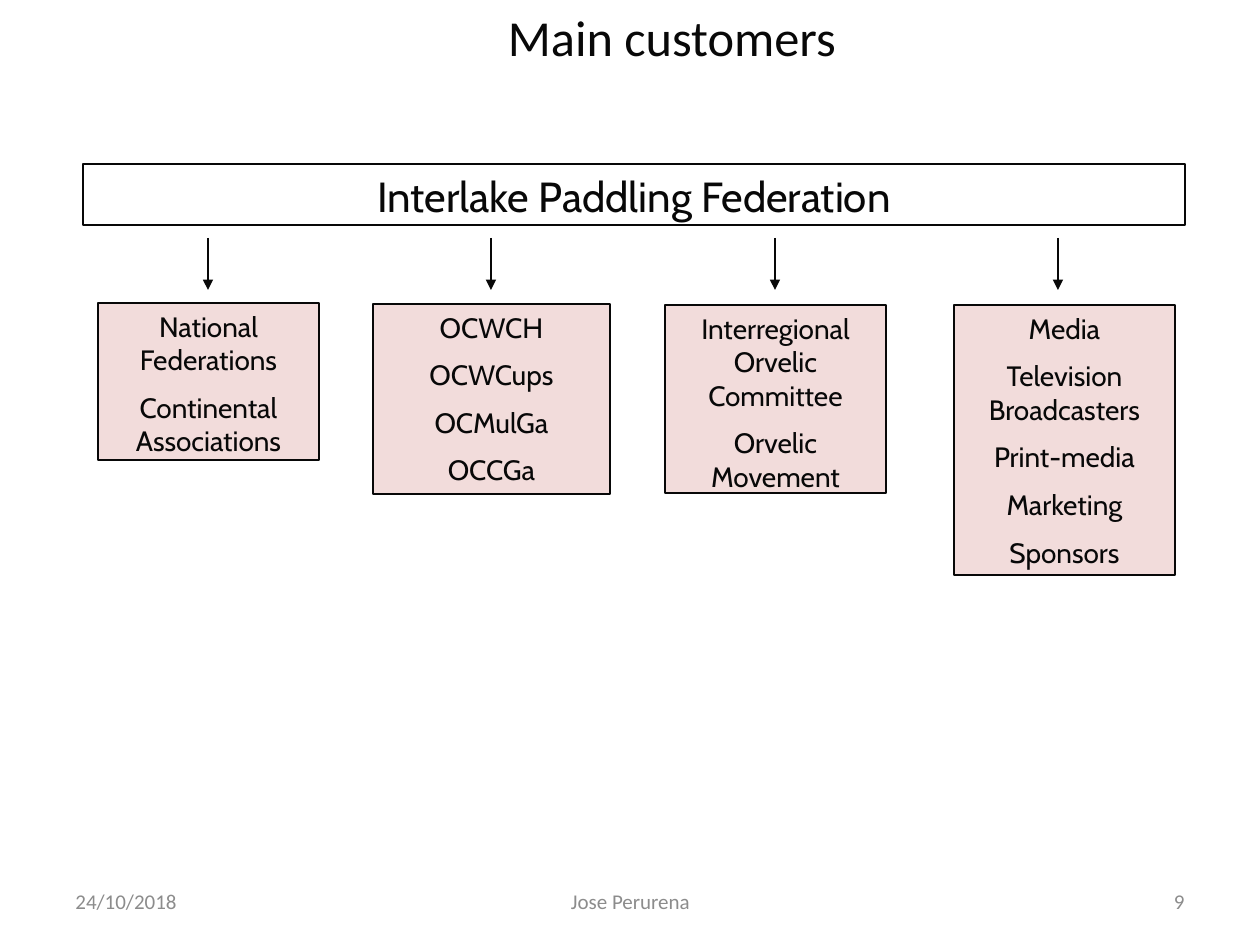
from copy import deepcopy

from pptx import Presentation
from pptx.dml.color import RGBColor
from pptx.enum.shapes import MSO_CONNECTOR as Conn, MSO_SHAPE as Shape
from pptx.enum.text import MSO_ANCHOR as Anchor, PP_ALIGN as Align
from pptx.oxml.ns import qn
from pptx.util import Pt
from lxml import etree

INK = RGBColor(0x08, 0x08, 0x08)
ROSE = RGBColor(0xF2, 0xDC, 0xDB)
GREY = RGBColor(0x8C, 0x8C, 0x8C)
SCALE = 914400 / 126


def px(*nums):
    return [round(n * SCALE) for n in nums]


def write(frame, paras, size=16, font="Cabin", color=INK,
          align=Align.CENTER, anchor=Anchor.TOP, gap=0):
    """Fill a text frame with one paragraph per item, all in one format."""
    frame.word_wrap = True
    frame.vertical_anchor = anchor
    for i, text in enumerate(paras):
        para = frame.add_paragraph() if i else frame.paragraphs[0]
        para.text = text
        para.alignment = align
        para.space_before = Pt(gap)
        for run in para.runs:
            run.font.size = Pt(size)
            run.font.name = font
            run.font.color.rgb = color
        # Line breaks take the format of the text around them
        for brk in para._p.findall(qn("a:br")):
            brk.append(deepcopy(para.runs[0]._r.rPr))


class Chart:
    """Holds the slide and its line style."""

    def __init__(self, slide, color=INK, width=1.5):
        self.shapes = slide.shapes
        self.color = color
        self.width = Pt(width)

    def stroke(self, line):
        line.color.rgb = self.color
        line.width = self.width

    def label(self, area, text, **style):
        box = self.shapes.add_textbox(*px(*area))
        write(box.text_frame, [text], font="Calibri",
              anchor=Anchor.MIDDLE, **style)

    def box(self, area, paras, fill=None, size=16):
        rect = self.shapes.add_shape(Shape.RECTANGLE, *px(*area))
        rect.shadow.inherit = False
        if fill is None:
            rect.fill.background()
        else:
            rect.fill.solid()
            rect.fill.fore_color.rgb = fill
        self.stroke(rect.line)
        write(rect.text_frame, paras, size=size, gap=size / 2)

    def arrow(self, x, top, end):
        link = self.shapes.add_connector(Conn.STRAIGHT, *px(x, top, x, end))
        self.stroke(link.line)
        props = link._element.spPr
        etree.SubElement(props.find(qn("a:ln")), qn("a:tailEnd"),
                         type="triangle")
        etree.SubElement(props, qn("a:effectLst"))


def main():
    deck = Presentation()
    deck.slide_width, deck.slide_height = px(1260, 945)
    chart = Chart(deck.slides.add_slide(deck.slide_layouts[6]))

    # Title and head of the tree
    chart.label((315, -3, 714, 79), "Main customers", size=28.8)
    chart.box((83, 164, 1102, 61), ["Interlake Paddling Federation"], size=24)

    # Customer groups
    groups = [
        ((98, 303, 221, 157),
         ["National Federations", "Continental Associations"]),
        ((665, 305, 221, 188),
         ["Interregional\nOrvelic\nCommittee", "Orvelic Movement"]),
        ((373, 304, 237, 190),
         ["OCWCH", "OCWCups", "OCMulGa", "OCCGa"]),
        ((954, 305, 221, 270),
         ["Media", "Television Broadcasters", "Print-media",
          "Marketing", "Sponsors"]),
    ]
    for area, paras in groups:
        chart.box(area, paras, fill=ROSE)

    # Evenly spaced arrows
    for i in range(4):
        chart.arrow(208 + i * 567 // 2, 238, 290)

    # Footer
    footer = [
        (63, 294, "24/10/2018", Align.LEFT),
        (431, 399, "Jose Perurena", Align.CENTER),
        (903, 294, "9", Align.RIGHT),
    ]
    for left, width, text, align in footer:
        chart.label((left, 876, width, 50), text, size=12,
                    color=GREY, align=align)

    deck.save("out.pptx")


if __name__ == "__main__":
    main()
